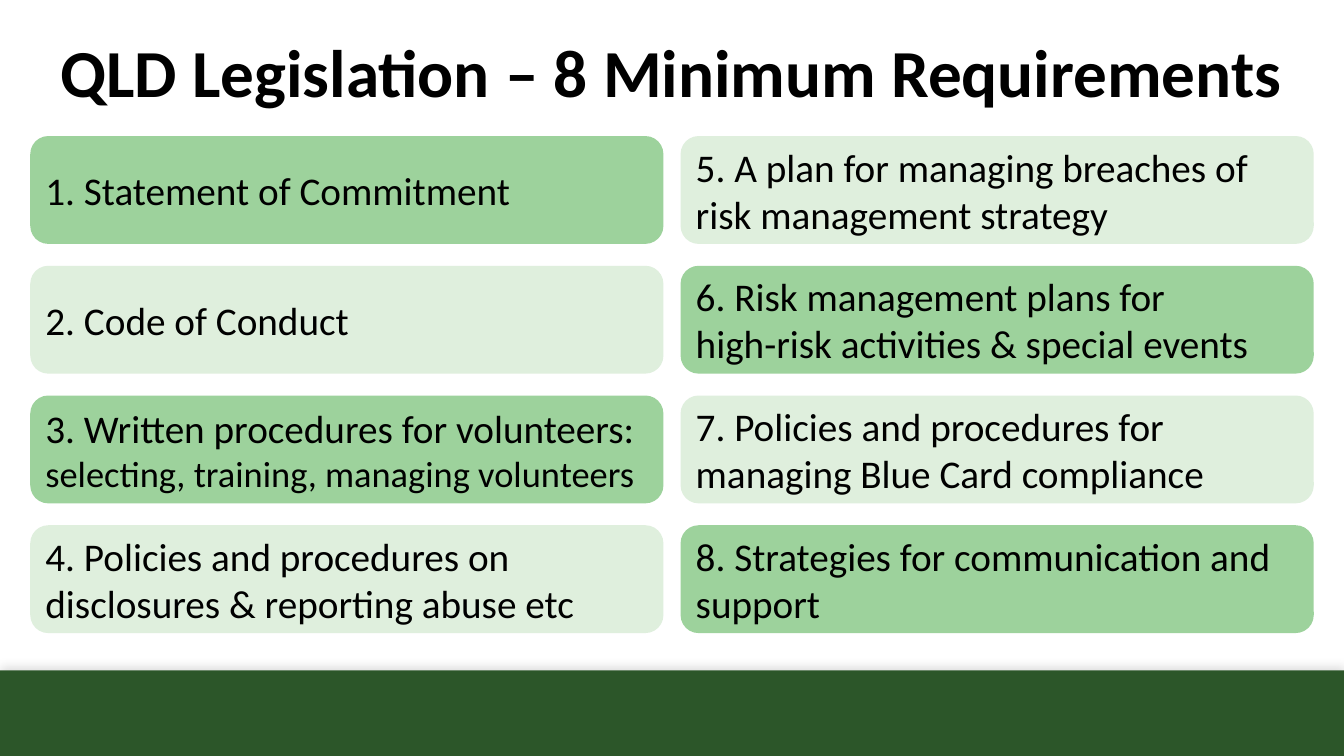
from dataclasses import dataclass

from lxml import etree
from pptx import Presentation
from pptx.dml.color import RGBColor
from pptx.enum.shapes import MSO_SHAPE
from pptx.enum.text import MSO_ANCHOR, MSO_AUTO_SIZE, PP_ALIGN
from pptx.oxml.ns import qn
from pptx.shapes.autoshape import Shape
from pptx.slide import Slide
from pptx.text.text import Font
from pptx.util import Inches, Pt

RECT = MSO_SHAPE.RECTANGLE
ROUND = MSO_SHAPE.ROUNDED_RECTANGLE
MIDDLE = MSO_ANCHOR.MIDDLE
FIXED = MSO_AUTO_SIZE.NONE
LEFT = PP_ALIGN.LEFT
CENTER = PP_ALIGN.CENTER

BLACK = "000000"
FOREST = "2C5629"
GREEN = "9DD29C"
PALE = "DFEFDD"
ROWS = 4


@dataclass
class Card:
    text: str
    detail: str = ""


CARDS = [
    Card("1. Statement of Commitment"),
    Card("2. Code of Conduct"),
    Card("3. Written procedures for volunteers:", "selecting, training, managing volunteers"),
    Card("4. Policies and procedures on disclosures & reporting abuse etc"),
    Card("5. A plan for managing breaches of risk management strategy"),
    Card("6. Risk management plans for \vhigh-risk activities & special events"),
    Card("7. Policies and procedures for managing Blue Card compliance"),
    Card("8. Strategies for communication and support"),
]


def color(code: str) -> RGBColor:
    return RGBColor.from_string(code)


def style(font: Font, size: float, bold: bool = False) -> None:
    font.name = "Calibri"
    font.size = Pt(size)
    font.bold = bold
    font.color.rgb = color(BLACK)


def add_block(slide: Slide, kind: MSO_SHAPE, left: float, top: float,
              width: float, height: float, fill: str) -> Shape:
    block = slide.shapes.add_shape(
        kind, Inches(left), Inches(top), Inches(width), Inches(height))
    block.shadow.inherit = False
    block.fill.solid()
    block.fill.fore_color.rgb = color(fill)
    block.line.fill.background()
    return block


def add_glow(block: Shape) -> None:
    effects = block.element.spPr.find(qn("a:effectLst"))
    shade = etree.SubElement(
        effects, qn("a:outerShdw"), blurRad=str(Pt(7)), dist=str(Pt(3)),
        dir="16200000", algn="b", rotWithShape="0")
    tone = etree.SubElement(shade, qn("a:srgbClr"), val=BLACK)
    etree.SubElement(tone, qn("a:alpha"), val="13000")


def add_title(slide: Slide, text: str) -> None:
    title = slide.shapes.title
    title.left, title.top = Inches(0.21), Inches(0.03)
    title.width, title.height = Inches(12.9), Inches(1.45)
    frame = title.text_frame
    frame.text = text
    frame.word_wrap = True
    frame.auto_size = FIXED
    frame.vertical_anchor = MIDDLE
    para = frame.paragraphs[0]
    para.alignment = CENTER
    para.line_spacing = 0.9
    style(para.font, 48, True)


def add_card(slide: Slide, card: Card, index: int) -> None:
    col, row = divmod(index, ROWS)
    fill = PALE if (col + row) % 2 else GREEN
    block = add_block(slide, ROUND, 0.3 + 6.45 * col, 1.35 + 1.287 * row,
                      6.28, 1.07, fill)
    frame = block.text_frame
    frame.word_wrap = True
    frame.vertical_anchor = MIDDLE
    para = frame.paragraphs[0]
    para.text = card.text
    para.alignment = LEFT
    style(para.font, 28)
    if card.detail:
        para.add_line_break()
        run = para.add_run()
        run.text = card.detail
        run.font.size = Pt(26)


def main() -> None:
    deck = Presentation()
    deck.slide_width, deck.slide_height = Inches(13.33), Inches(7.5)
    slide = deck.slides.add_slide(deck.slide_layouts[5])
    add_glow(add_block(slide, RECT, 0, 6.65, 13.33, 0.85, FOREST))
    add_title(slide, "QLD Legislation – 8 Minimum Requirements")
    for index, card in enumerate(CARDS):
        add_card(slide, card, index)
    deck.save("out.pptx")


if __name__ == "__main__":
    main()
